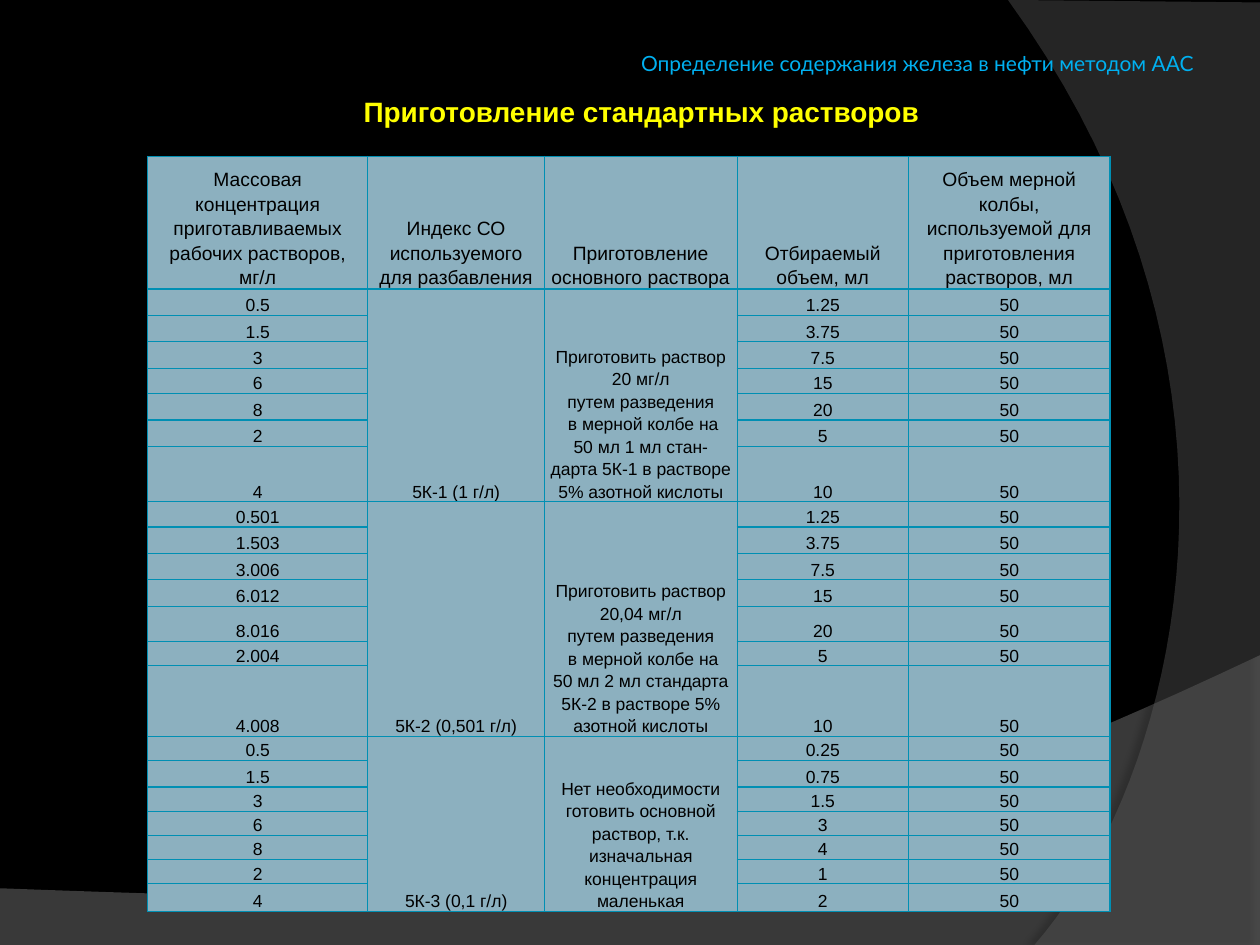
import dataclasses

import lxml.etree
import pptx
import pptx.dml.color
import pptx.enum.text
import pptx.oxml
import pptx.oxml.ns
import pptx.util

Inches = pptx.util.Inches
Pt = pptx.util.Pt
RGB = pptx.dml.color.RGBColor.from_string
ALIGN = pptx.enum.text.PP_ALIGN
ANCHOR = pptx.enum.text.MSO_ANCHOR
qn = pptx.oxml.ns.qn


@dataclasses.dataclass(frozen=True)
class Theme:
    background: str = "000000"
    floor: str = "7F7F7F"
    arc: str = "5E5E5E"
    shadow: str = "000000"
    topic: str = "00B0F0"
    heading: str = "FFFF00"
    cell: str = "8CB0BF"
    border: str = "008FB3"
    ink: str = "000000"
    title_font: str = "Lato"
    body_font: str = "Arial"
    topic_size: int = 12
    heading_size: int = 16
    header_size: int = 11
    value_size: int = 10
    border_width: float = 0.75


THEME = Theme()

COLUMN_WIDTHS = [1.75, 1.4, 1.53, 1.36, 1.6]
ROW_HEIGHTS = [
    1.02,
    0.21, 0.21, 0.21, 0.2, 0.21, 0.21, 0.44,
    0.2, 0.21, 0.21, 0.21, 0.28, 0.19, 0.56,
    0.19, 0.21, 0.19, 0.19, 0.19, 0.19, 0.22,
]
HEADERS = [
    "Массовая концентрация приготавливаемых рабочих растворов, мг/л",
    "Индекс СО используемого для разбавления",
    "Приготовление основного раствора",
    "Отбираемый\nобъем, мл",
    "Объем мерной колбы, используемой для приготовления растворов, мл",
]
FLASK_VOLUME = "50"
STANDARDS = [
    (
        "5К-1 (1 г/л)",
        "Приготовить раствор 20 мг/л\nпутем разведения\n в мерной колбе на\n"
        "50 мл 1 мл стан-дарта 5К-1 в растворе 5% азотной кислоты",
        ["0.5", "1.5", "3", "6", "8", "2", "4"],
        ["1.25", "3.75", "7.5", "15", "20", "5", "10"],
    ),
    (
        "5К-2 (0,501 г/л)",
        "Приготовить раствор 20,04 мг/л\nпутем разведения\n в мерной колбе на\n"
        "50 мл 2 мл стандарта 5К-2 в растворе 5% азотной кислоты",
        ["0.501", "1.503", "3.006", "6.012", "8.016", "2.004", "4.008"],
        ["1.25", "3.75", "7.5", "15", "20", "5", "10"],
    ),
    (
        "5К-3 (0,1 г/л)",
        "Нет необходимости готовить основной раствор, т.к. изначальная "
        "концентрация маленькая",
        ["0.5", "1.5", "3", "6", "8", "2", "4"],
        ["0.25", "0.75", "1.5", "3", "4", "1", "2"],
    ),
]


def curve(start, control_1, control_2, end, steps=40):
    points = []
    for step in range(steps + 1):
        t = step / steps
        weights = ((1 - t) ** 3, 3 * t * (1 - t) ** 2, 3 * t**2 * (1 - t), t**3)
        axes = zip(start, control_1, control_2, end)
        points.append(tuple(sum(w * v for w, v in zip(weights, axis)) for axis in axes))
    return points


def set_alpha(color, percent):
    lxml.etree.SubElement(color, qn("a:alpha"), val=str(percent * 1000))


def add_backdrop(slide, points, color, opacity, shadow_opacity, distance, direction):
    outline = [(Inches(x), Inches(y)) for x, y in points]
    builder = slide.shapes.build_freeform(*outline[0])
    builder.add_line_segments(outline[1:])
    backdrop = builder.convert_to_shape()
    backdrop.fill.solid()
    backdrop.fill.fore_color.rgb = RGB(color)
    backdrop.line.fill.background()
    backdrop.shadow.inherit = False
    properties = backdrop.element.spPr
    set_alpha(properties.find(".//" + qn("a:srgbClr")), opacity)
    shadow = lxml.etree.SubElement(
        properties.find(qn("a:effectLst")), qn("a:outerShdw"),
        blurRad=str(Pt(4)), dist=str(Pt(distance)), dir=str(direction * 60000),
        algn="ctr", rotWithShape="0",
    )
    shadow_color = lxml.etree.SubElement(shadow, qn("a:srgbClr"), val=THEME.shadow)
    set_alpha(shadow_color, shadow_opacity)


def write(paragraph, text, font_name, size, color, align, bold=False):
    paragraph.text = text
    paragraph.alignment = align
    paragraph.font.name = font_name
    paragraph.font.size = Pt(size)
    paragraph.font.bold = bold
    paragraph.font.color.rgb = RGB(color)


def place_title(slide, text):
    title = slide.shapes.title
    slide.shapes.element.append(title.element)
    title.left, title.top = Inches(0.5), Inches(0.3)
    title.width, title.height = Inches(9.03), Inches(0.4)
    frame = title.text_frame
    frame.margin_left = frame.margin_right = Inches(0.05)
    frame.margin_top = frame.margin_bottom = Inches(0.05)
    frame.vertical_anchor = ANCHOR.MIDDLE
    write(frame.paragraphs[0], text, THEME.title_font, THEME.topic_size,
          THEME.topic, ALIGN.RIGHT)


def add_heading(slide, text):
    heading = slide.shapes.add_textbox(Inches(0.5), Inches(0.7), Inches(9.03), Inches(0.4))
    frame = heading.text_frame
    frame.word_wrap = True
    frame.margin_left = Inches(0.25)
    write(frame.paragraphs[0], text, THEME.body_font, THEME.heading_size,
          THEME.heading, ALIGN.CENTER, bold=True)


def add_borders(cell):
    properties = cell._tc.get_or_add_tcPr()
    for position, side in enumerate(("a:lnL", "a:lnR", "a:lnT", "a:lnB")):
        line = properties.makeelement(qn(side), {"w": str(Pt(THEME.border_width))})
        fill = lxml.etree.SubElement(line, qn("a:solidFill"))
        lxml.etree.SubElement(fill, qn("a:srgbClr"), val=THEME.border)
        properties.insert(position, line)


def fill_cell(cell, text, size):
    cell.margin_left = cell.margin_right = Inches(0.05)
    cell.margin_top = cell.margin_bottom = 0
    cell.vertical_anchor = ANCHOR.BOTTOM
    cell.fill.solid()
    cell.fill.fore_color.rgb = RGB(THEME.cell)
    add_borders(cell)
    paragraph = cell.text_frame.paragraphs[0]
    write(paragraph, text, THEME.body_font, size, THEME.ink, ALIGN.CENTER)
    paragraph.line_spacing = 1.15


def add_solutions_table(slide):
    rows = [HEADERS]
    for index, preparation, concentrations, volumes in STANDARDS:
        for number, (concentration, volume) in enumerate(zip(concentrations, volumes)):
            shared = ["", ""] if number else [index, preparation]
            rows.append([concentration, *shared, volume, FLASK_VOLUME])
    table = slide.shapes.add_table(
        len(rows), len(HEADERS), Inches(1.17), Inches(1.24),
        Inches(sum(COLUMN_WIDTHS)), Inches(sum(ROW_HEIGHTS)),
    ).table
    table.first_row = table.horz_banding = False
    for column, width in zip(table.columns, COLUMN_WIDTHS):
        column.width = Inches(width)
    for row, height, texts in zip(table.rows, ROW_HEIGHTS, rows):
        row.height = Inches(height)
        size = THEME.header_size if texts is HEADERS else THEME.value_size
        for cell, text in zip(row.cells, texts):
            fill_cell(cell, text, size)
    first = 1
    for _, _, concentrations, _ in STANDARDS:
        last = first + len(concentrations) - 1
        for column in (1, 2):
            table.cell(first, column).merge(table.cell(last, column))
        first = last + 1


def main():
    presentation = pptx.Presentation()
    presentation.slide_width, presentation.slide_height = Inches(10), Inches(7.5)
    slide = presentation.slides.add_slide(presentation.slide_layouts[5])
    slide.background.fill.solid()
    slide.background.fill.fore_color.rgb = RGB(THEME.background)
    floor = [(0, 7.51), (10, 7.51), *curve((10, 5.2), (5.59, 7.29), (3.91, 7.19), (0, 7.05))]
    arc = [(10, 0.02), (10, 7.5), *curve((8.21, 7.5), (9.35, 6.19), (10.18, 3), (8, 0))]
    add_backdrop(slide, floor, THEME.floor, 45, 35, 3.5, 270)
    add_backdrop(slide, arc, THEME.arc, 40, 45, 4, 180)
    place_title(slide, "Определение содержания железа в нефти методом ААС")
    add_heading(slide, "Приготовление стандартных растворов")
    add_solutions_table(slide)
    presentation.save("out.pptx")


if __name__ == "__main__":
    main()
